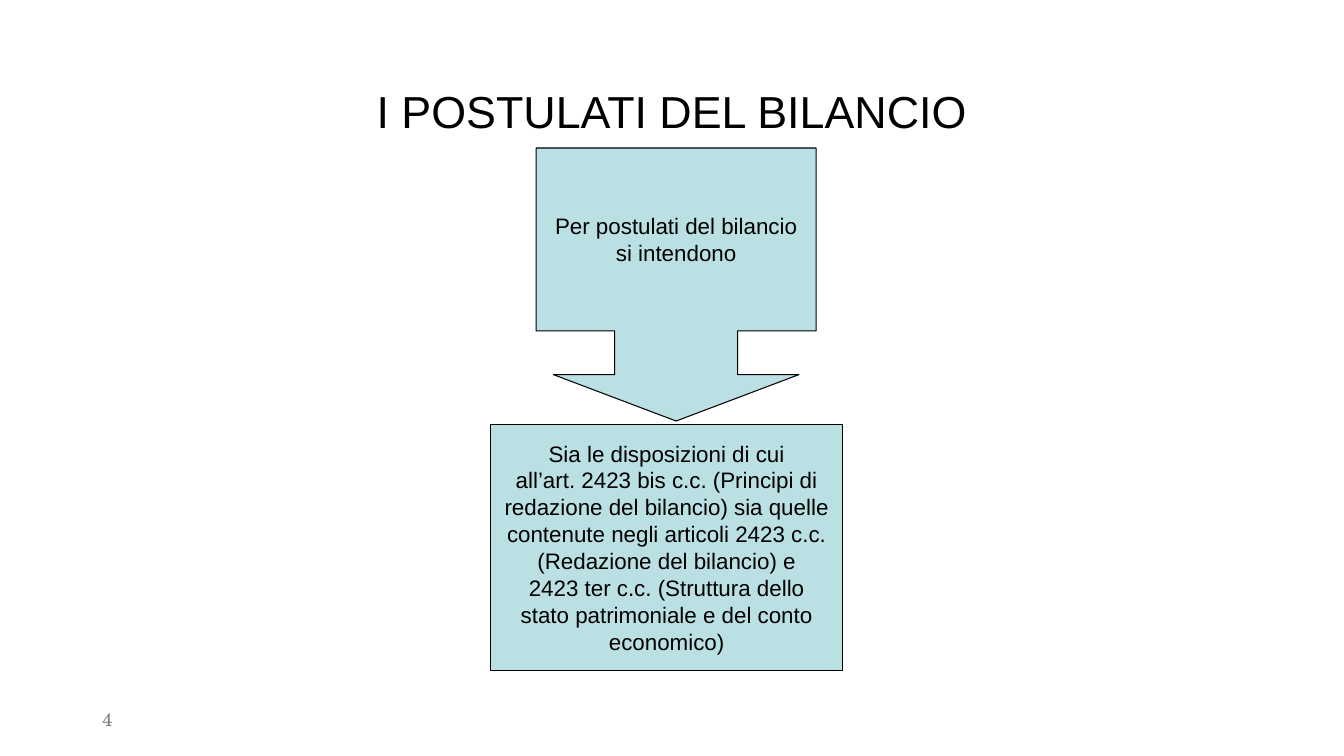
from dataclasses import dataclass

from pptx import Presentation
from pptx.dml.color import RGBColor
from pptx.enum.shapes import MSO_AUTO_SHAPE_TYPE as ShapeType
from pptx.enum.text import MSO_ANCHOR, MSO_AUTO_SIZE, PP_ALIGN
from pptx.slide import Slide
from pptx.text.text import TextFrame
from pptx.util import Cm, Pt

BLACK, GREY, PALE_TEAL = "000000", "808080", "BBE0E3"


@dataclass(frozen=True)
class Box:
    left: float
    top: float
    width: float
    height: float

    def lengths(self) -> tuple[Cm, Cm, Cm, Cm]:
        return Cm(self.left), Cm(self.top), Cm(self.width), Cm(self.height)


@dataclass(frozen=True)
class Panel:
    outline: ShapeType
    box: Box
    lines: tuple[str, ...]
    adjustments: tuple[float, ...] = ()


PANELS = (
    Panel(
        ShapeType.DOWN_ARROW_CALLOUT,
        Box(13.51, 3.73, 7.06, 6.88),
        ("Per postulati del bilancio", "si intendono"),
        (0.45, 0.45, 0.17, 0.67),
    ),
    Panel(
        ShapeType.RECTANGLE,
        Box(12.37, 10.69, 8.86, 6.2),
        (
            "Sia le disposizioni di cui",
            "all’art. 2423 bis c.c. (Principi di",
            "redazione del bilancio) sia quelle",
            "contenute negli articoli 2423 c.c.",
            "(Redazione del bilancio) e",
            "2423 ter c.c. (Struttura dello",
            "stato patrimoniale e del conto",
            "economico)",
        ),
    ),
)


def colour(code: str) -> RGBColor:
    return RGBColor.from_string(code)


def write(frame: TextFrame, lines: tuple[str, ...], size: float,
          align: PP_ALIGN = PP_ALIGN.CENTER, spacing: float = 1.0,
          font: str = "Arial", ink: str = BLACK) -> None:
    """Fill a frame with one equally formatted paragraph per line."""
    frame.text = "\n".join(lines)
    frame.auto_size = MSO_AUTO_SIZE.NONE
    frame.vertical_anchor = MSO_ANCHOR.MIDDLE
    for paragraph in frame.paragraphs:
        paragraph.alignment = align
        paragraph.line_spacing = spacing
        paragraph.font.name = font
        paragraph.font.size = Pt(size)
        paragraph.font.color.rgb = colour(ink)


def draw_panel(slide: Slide, panel: Panel) -> None:
    shape = slide.shapes.add_shape(panel.outline, *panel.box.lengths())
    for index, value in enumerate(panel.adjustments):
        shape.adjustments[index] = value
    shape.shadow.inherit = False
    shape.fill.solid()
    shape.fill.fore_color.rgb = colour(PALE_TEAL)
    shape.line.color.rgb = colour(BLACK)
    shape.line.width = Pt(0.75)
    write(shape.text_frame, panel.lines, 16)
    shape.text_frame.word_wrap = False


def main() -> None:
    deck = Presentation()
    deck.slide_width, deck.slide_height = Cm(33.87), Cm(19.05)
    slide = deck.slides.add_slide(deck.slide_layouts.get_by_name("Title Only"))

    title = slide.shapes.title
    title.left, title.top, title.width, title.height = Box(2.33, 1.02, 29.21, 3.68).lengths()
    write(title.text_frame, ("I POSTULATI DEL BILANCIO",), 32, spacing=0.9)

    page_number = slide.shapes.add_textbox(*Box(2.33, 17.65, 7.62, 1.02).lengths())
    write(page_number.text_frame, ("4",), 13, PP_ALIGN.LEFT, 0.93, "TeX Gyre Schola", GREY)
    page_number.text_frame.word_wrap = True

    for panel in PANELS:
        draw_panel(slide, panel)

    deck.save("out.pptx")


if __name__ == "__main__":
    main()
